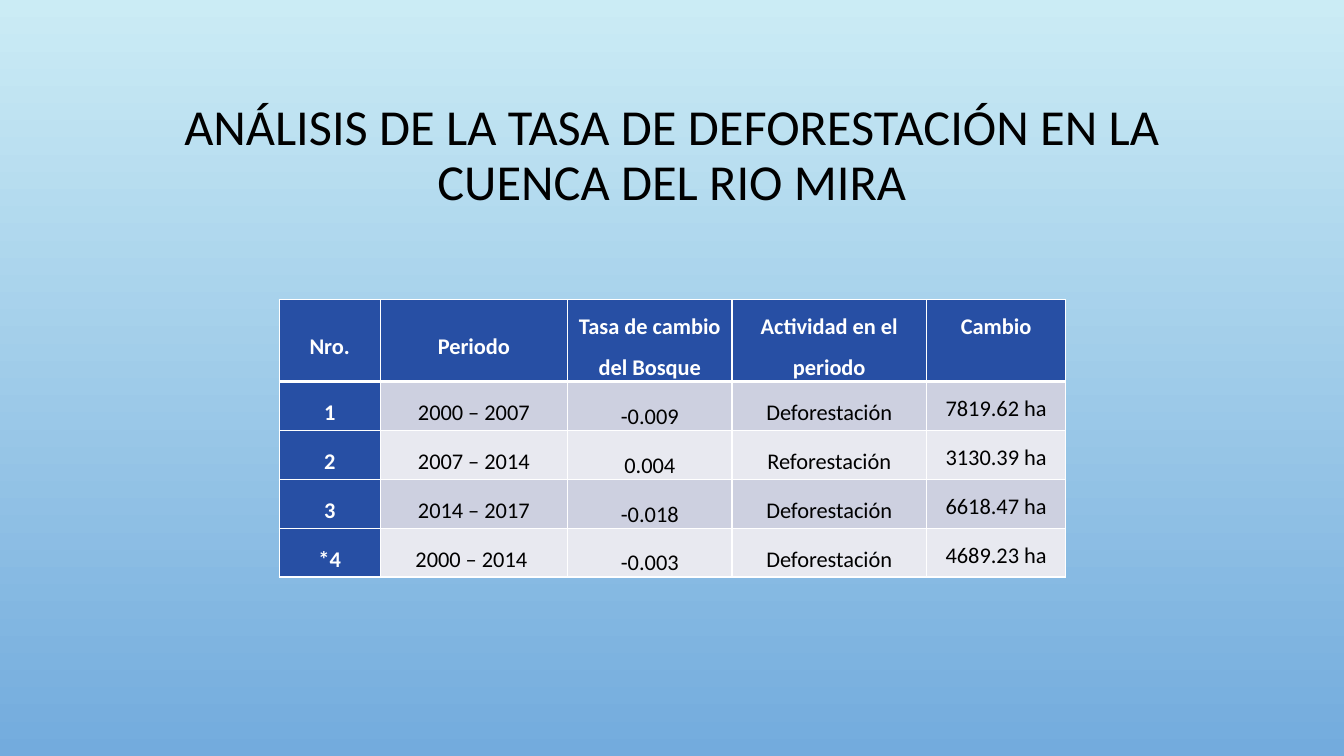
from lxml.etree import SubElement
from pptx import Presentation
from pptx.dml.color import RGBColor
from pptx.enum.text import MSO_ANCHOR as Anchor, MSO_AUTO_SIZE as AutoSize, PP_ALIGN as Align
from pptx.oxml.ns import qn
from pptx.util import Inches, Pt

COLORS = {
    "sky_top": "CBECF5",
    "sky_bottom": "73ABDD",
    "header": "274FA4",
    "odd_row": "CDD0E0",
    "even_row": "E8E9F0",
    "white": "FFFFFF",
    "black": "000000",
}


def format_paragraph(paragraph, size, color, bold, spacing):
    paragraph.alignment = Align.CENTER
    paragraph.line_spacing = spacing
    for attribute, value in {"name": "Calibri", "size": Pt(size), "bold": bold}.items():
        setattr(paragraph.font, attribute, value)
    paragraph.font.color.rgb = RGBColor.from_string(COLORS[color])


def add_border(cell, side, width):
    line = SubElement(cell._tc.get_or_add_tcPr(), qn(f"a:ln{side}"), w=str(Pt(width)))
    line_fill = SubElement(line, qn("a:solidFill"))
    SubElement(line_fill, qn("a:srgbClr"), val=COLORS["white"])


prs = Presentation()
prs.slide_width = Inches(13.33)
prs.slide_height = Inches(7.5)
slide = prs.slides.add_slide(prs.slide_layouts[5])

sky = slide.background.fill
sky.gradient()
sky.gradient_angle = 270
for stop, color in zip(sky.gradient_stops, ("sky_top", "sky_bottom")):
    stop.color.rgb = RGBColor.from_string(COLORS[color])

title = slide.shapes.title
title_box = {"left": 1, "top": 0.68, "width": 11.33, "height": 1.75}
for attribute, value in title_box.items():
    setattr(title, attribute, Inches(value))
title.text_frame.text = "ANÁLISIS DE LA TASA DE DEFORESTACIÓN EN LA CUENCA DEL RIO MIRA"
title_format = {"vertical_anchor": Anchor.MIDDLE, "word_wrap": True, "auto_size": AutoSize.NONE}
for attribute, value in title_format.items():
    setattr(title.text_frame, attribute, value)
format_paragraph(title.text_frame.paragraphs[0], 36, "black", False, 0.9)

rates = [
    ["Nro.", "Periodo", "Tasa de cambio del Bosque", "Actividad en el periodo", "Cambio"],
    ["1", "2000 – 2007", "-0.009", "Deforestación", "7819.62 ha"],
    ["2", "2007 – 2014", "0.004", "Reforestación", "3130.39 ha"],
    ["3", "2014 – 2017", "-0.018", "Deforestación", "6618.47 ha"],
    ["*4", "2000 – 2014 ", "-0.003", "Deforestación", "4689.23 ha"],
]
column_widths = [1, 1.86, 1.63, 1.93, 1.38]
row_heights = [0.81] + [0.485] * 4
column_anchors = [Anchor.MIDDLE, Anchor.MIDDLE, Anchor.BOTTOM, Anchor.MIDDLE, Anchor.TOP]

rate_table = slide.shapes.add_table(
    len(rates), len(column_widths),
    Inches(2.77), Inches(2.97), Inches(sum(column_widths)), Inches(sum(row_heights)),
).table
for column, width in zip(rate_table.columns, column_widths):
    column.width = Inches(width)
for row, height in zip(rate_table.rows, row_heights):
    row.height = Inches(height)

cell_margins = {"margin_left": 0.05, "margin_right": 0.05, "margin_top": 0, "margin_bottom": 0}
for r, record in enumerate(rates):
    for c, entry in enumerate(record):
        cell = rate_table.cell(r, c)
        is_heading = r == 0 or c == 0
        cell.text = entry
        for attribute, value in cell_margins.items():
            setattr(cell, attribute, Inches(value))
        cell.vertical_anchor = Anchor.MIDDLE if r == 0 and c < 4 else column_anchors[c]
        for side, width in {"L": 1, "R": 1, "T": 3 if r == 1 else 1, "B": 3 if r == 0 else 1}.items():
            add_border(cell, side, width)
        band = "header" if is_heading else "odd_row" if r % 2 else "even_row"
        cell.fill.solid()
        cell.fill.fore_color.rgb = RGBColor.from_string(COLORS[band])
        format_paragraph(
            cell.text_frame.paragraphs[0], 16, "white" if is_heading else "black", is_heading, 1.5
        )

prs.save("out.pptx")
